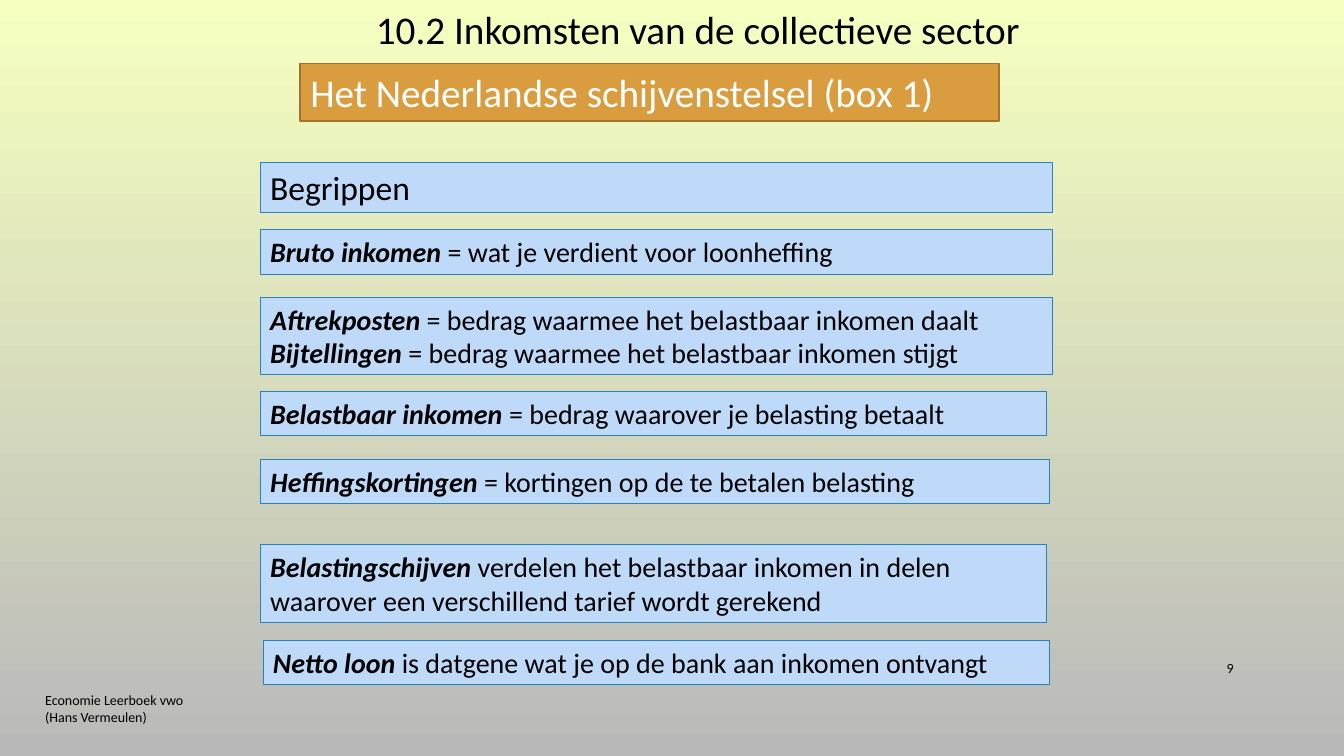
from pptx import Presentation
from pptx.dml.color import RGBColor
from pptx.enum.shapes import MSO_SHAPE
from pptx.enum.text import MSO_ANCHOR, MSO_AUTO_SIZE, PP_ALIGN
from pptx.util import Cm, Pt

BLACK = RGBColor(0x00, 0x00, 0x00)
WHITE = RGBColor(0xFF, 0xFF, 0xFF)
YELLOW = RGBColor(0xF6, 0xFF, 0xC0)
GREY = RGBColor(0xB9, 0xB9, 0xB9)
ORANGE = RGBColor(0xD9, 0x9C, 0x3F)
BROWN = RGBColor(0xA1, 0x73, 0x2F)
LIGHT_BLUE = RGBColor(0xBF, 0xDA, 0xF9)
BLUE = RGBColor(0x26, 0x83, 0xBF)
RECT = MSO_SHAPE.RECTANGLE
TOP, MIDDLE = MSO_ANCHOR.TOP, MSO_ANCHOR.MIDDLE
LEFT, RIGHT = PP_ALIGN.LEFT, PP_ALIGN.RIGHT
FIT_SHAPE = MSO_AUTO_SIZE.SHAPE_TO_FIT_TEXT


def write(sp, lines, size, color=BLACK, anchor=TOP, align=LEFT):
    tf = sp.text_frame
    tf.word_wrap = True
    tf.vertical_anchor = anchor
    if anchor == TOP:
        tf.auto_size = FIT_SHAPE
    for i, (term, meaning) in enumerate(lines):
        p = tf.add_paragraph() if i else tf.paragraphs[0]
        p.alignment = align
        for text, strong in ((term, True), (meaning, False)):
            if text:
                r = p.add_run()
                r.text = text
                r.font.name = "Calibri"
                r.font.size = Pt(size)
                r.font.bold = r.font.italic = strong
                r.font.color.rgb = color


def add_box(left, top, width, height, fill, line, weight):
    sp = slide.shapes.add_shape(RECT, Cm(left), Cm(top), Cm(width), Cm(height))
    sp.shadow.inherit = False
    sp.fill.solid()
    sp.fill.fore_color.rgb = fill
    sp.line.color.rgb = line
    sp.line.width = Pt(weight)
    return sp


prs = Presentation()
prs.slide_width, prs.slide_height = Cm(33.87), Cm(19.05)
slide = prs.slides.add_slide(prs.slide_layouts[5])

bg = slide.background.fill
bg.gradient()
bg.gradient_angle = 270
for stop, color, position in zip(bg.gradient_stops, (YELLOW, GREY), (0, 1)):
    stop.color.rgb = color
    stop.position = position

title = slide.shapes.title
title.left, title.top, title.width, title.height = Cm(9.22), Cm(0), Cm(17.93), Cm(1.45)
write(title, [("", "10.2 Inkomsten van de collectieve sector")], 28)

heading = add_box(7.57, 1.6, 17.6, 1.45, ORANGE, BROWN, 1.25)
write(heading, [("", "Het Nederlandse schijvenstelsel (box 1)")], 28, WHITE)

concepts = [
    (6.56, 4.09, 19.96, 1.27, 24, [("", "Begrippen")]),
    (6.56, 5.79, 19.96, 1.12, 20,
     [("Bruto inkomen ", "= wat je verdient voor loonheffing")]),
    (6.56, 7.49, 19.96, 1.96, 20,
     [("Aftrekposten", " = bedrag waarmee het belastbaar inkomen daalt"),
      ("Bijtellingen", " = bedrag waarmee het belastbaar inkomen stijgt")]),
    (6.56, 9.86, 19.82, 1.12, 20,
     [("Belastbaar inkomen ", "= bedrag waarover je belasting betaalt")]),
    (6.56, 11.58, 19.88, 1.12, 20,
     [("Heffingskortingen", " = kortingen op de te betalen belasting")]),
    (6.56, 13.72, 19.82, 1.96, 20,
     [("Belastingschijven", " verdelen het belastbaar inkomen in delen "
       "waarover een verschillend tarief wordt gerekend")]),
    (6.63, 16.14, 19.82, 1.12, 20,
     [("Netto loon", " is datgene wat je op de bank aan inkomen ontvangt")]),
]
for left, top, width, height, size, lines in concepts:
    sp = add_box(left, top, width, height, LIGHT_BLUE, BLUE, 0.75)
    write(sp, lines, size)

footers = [
    (0.89, 17.35, 4.06, "Economie Leerboek vwo (Hans Vermeulen)", LEFT),
    (29.21, 16.33, 2.13, "9", RIGHT),
]
for left, top, width, text, align in footers:
    sp = slide.shapes.add_textbox(Cm(left), Cm(top), Cm(width), Cm(1.02))
    write(sp, [("", text)], 10, anchor=MIDDLE, align=align)

prs.save("out.pptx")
